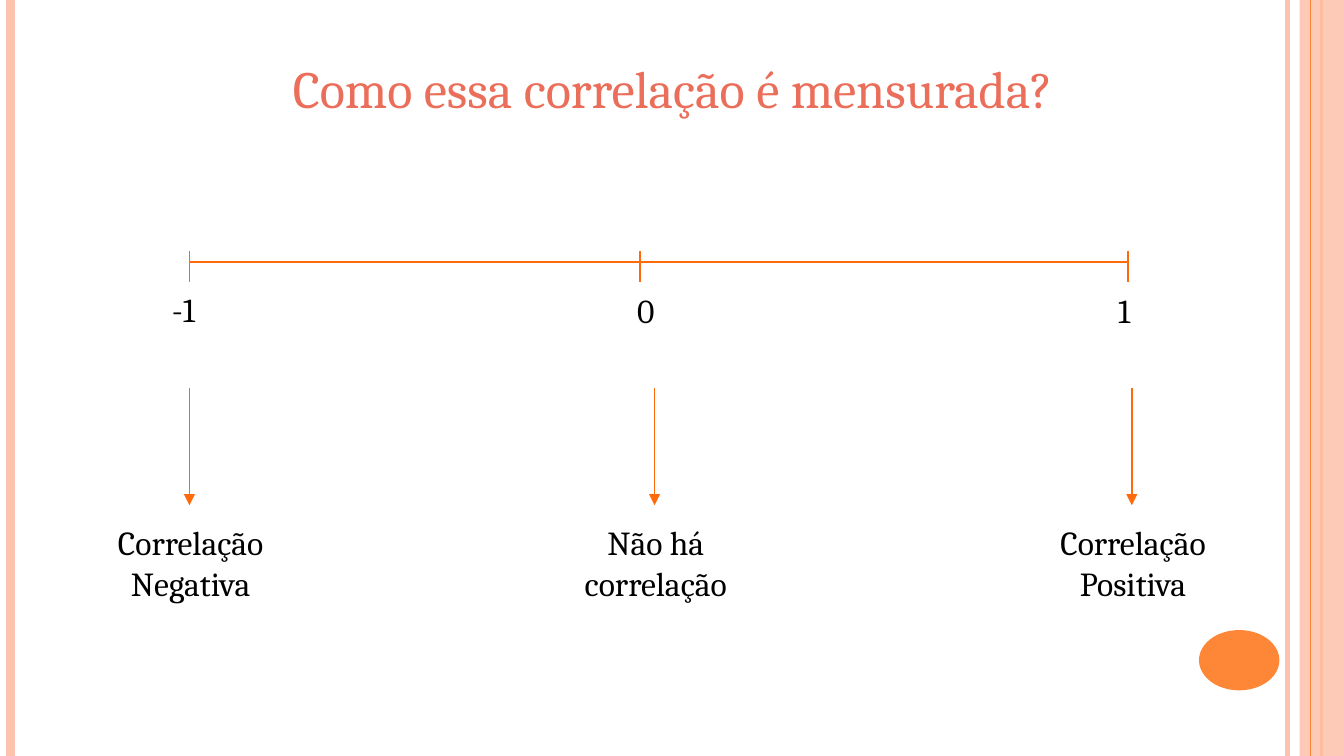
from pptx import Presentation
from pptx.dml.color import RGBColor
from pptx.enum.shapes import MSO_CONNECTOR as Conn, MSO_SHAPE as Kind
from pptx.enum.text import PP_ALIGN as Align
from pptx.oxml.ns import qn
from pptx.util import Cm, Pt
from lxml.etree import SubElement as Sub

PEACH = RGBColor(0xFE, 0xC3, 0xAE)
AMBER = RGBColor(0xFE, 0x86, 0x37)
ORANGE = RGBColor(0xFF, 0x6B, 0x0A)
CORAL = RGBColor(0xEB, 0x6E, 0x5A)
BLACK = RGBColor(0, 0, 0)
HIGH = 14.29

deck = Presentation()
deck.slide_width, deck.slide_height = Cm(25.4), Cm(HIGH)
slide = deck.slides.add_slide(deck.slide_layouts[6])
shapes = slide.shapes


def add_line(x1, y1, x2, y2, color=ORANGE, width=1):
    line = shapes.add_connector(Conn.STRAIGHT, Cm(x1), Cm(y1), Cm(x2), Cm(y2))
    line.line.color.rgb = color
    line.line.width = Pt(width)
    Sub(line._element.spPr, qn("a:effectLst"))
    return line


def add_text(text, x, y, w, h, size=18, color=BLACK, align=Align.CENTER):
    frame = shapes.add_textbox(Cm(x), Cm(y), Cm(w), Cm(h)).text_frame
    frame.word_wrap = True
    frame.text = text
    par = frame.paragraphs[0]
    par.alignment = align
    font = par.runs[0].font
    font.name, font.size = "Cambria", Pt(size)
    font.color.rgb = color


# Side stripes: lines, then the clear band over them
for x, color, width in [(24.33, PEACH, 3), (0.2, PEACH, 4.5), (24.97, AMBER, 1.5)]:
    add_line(x, 0, x, HIGH, color, width)
band = shapes.add_shape(Kind.RECTANGLE, Cm(24.56), 0, Cm(0.84), Cm(HIGH))
add_line(24.77, 0, 24.77, HIGH, AMBER, 0.75)
disc = shapes.add_shape(Kind.OVAL, Cm(22.66), Cm(11.91), Cm(1.52), Cm(1.14))
for shape, color in [(band, PEACH), (disc, AMBER)]:
    shape.shadow.inherit = False
    shape.fill.solid()
    shape.fill.fore_color.rgb = color
    shape.line.fill.background()
tint = band._element.spPr.find(qn("a:solidFill"))[0]
Sub(tint, qn("a:alpha"), val="87000")

# Title
add_text("Como essa correlação é mensurada?", 3.91, 0.94, 17.6, 1.45, 28, CORAL)

# Scale from -1 to 1, with an arrow down to each meaning
add_line(3.6, 4.95, 21.31, 4.95)
marks = [
    ("-1", 3.58, 3, 5.33, 3.58, "Correlação Negativa"),
    ("0", 12.09, 11.79, 5.36, 12.37, "Não há correlação"),
    ("1", 21.31, 20.88, 5.36, 21.39, "Correlação Positiva"),
]
for value, tick, left, top, mid, label in marks:
    add_line(tick, 4.75, tick, 5.33)
    add_text(value, left, top, 1.19, 1.02, align=Align.LEFT)
    arrow = add_line(mid, 7.34, mid, 9.55)
    Sub(arrow.line._get_or_add_ln(), qn("a:tailEnd"), type="triangle")
    add_text(label, mid - 1.88, 9.75, 3.81, 1.8)

deck.save("out.pptx")
